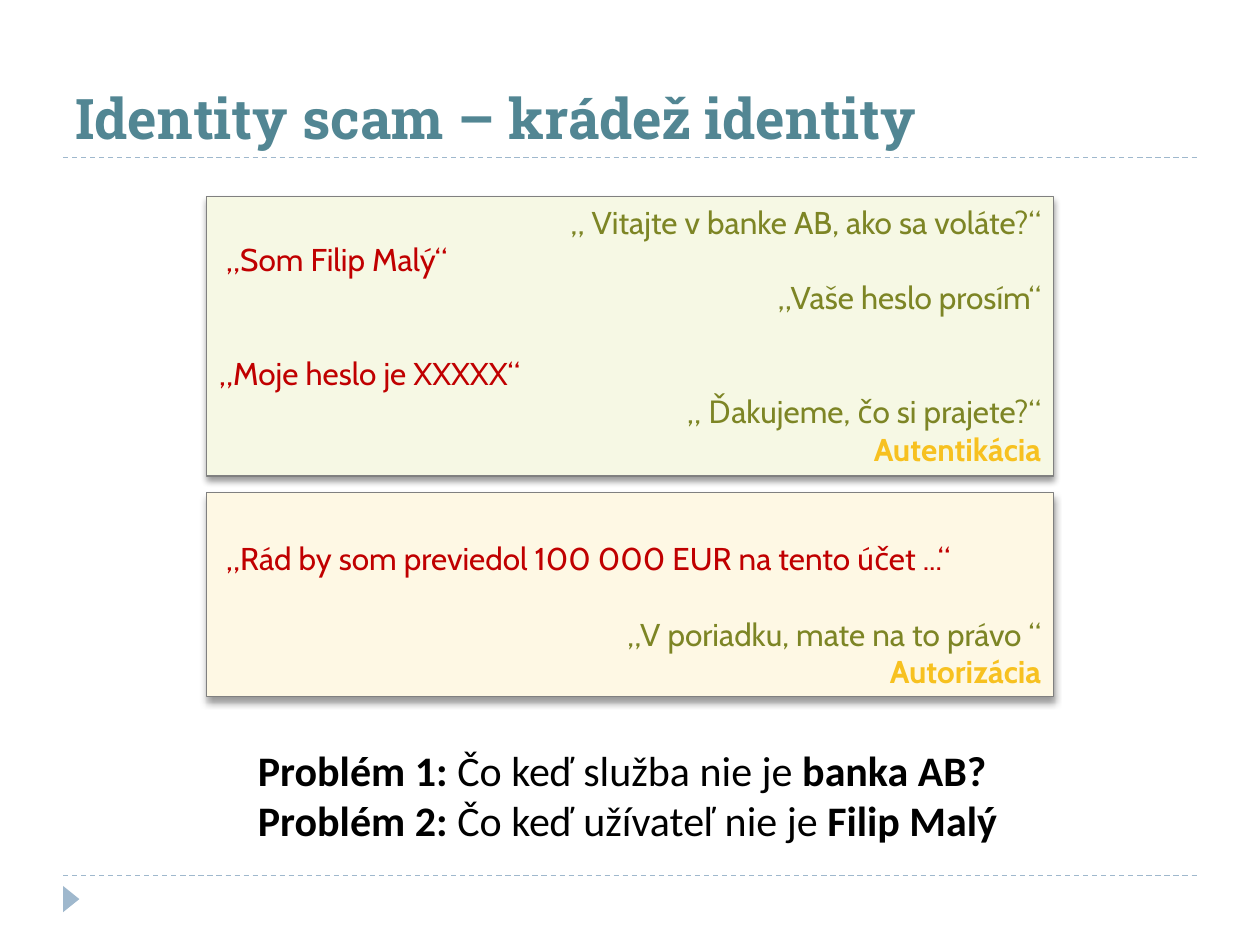
from lxml import etree
from pptx import Presentation
from pptx.dml.color import RGBColor
from pptx.enum.dml import MSO_LINE
from pptx.enum.shapes import MSO_CONNECTOR, MSO_SHAPE
from pptx.enum.text import MSO_ANCHOR, PP_ALIGN
from pptx.oxml.ns import qn
from pptx.util import Cm, Pt

LEFT, RIGHT = PP_ALIGN.LEFT, PP_ALIGN.RIGHT
TOP, BOTTOM = MSO_ANCHOR.TOP, MSO_ANCHOR.BOTTOM
RECTANGLE, TRIANGLE = MSO_SHAPE.RECTANGLE, MSO_SHAPE.ISOSCELES_TRIANGLE
STRAIGHT, DASH = MSO_CONNECTOR.STRAIGHT, MSO_LINE.DASH

COLORS = {
    "title": "528693",
    "accent": "9FB8CD",
    "bank": "7D8525",
    "caller": "C00000",
    "concept": "F7C120",
    "border": "808080",
    "green_panel": "F6F8E4",
    "yellow_panel": "FEF8E4",
    "black": "000000",
}
PANEL_LEFT, PANEL_WIDTH = 4.17, 17.07
LINE_GAP = 21.7  # points, one line of dialogue
CALLER_INDENT = 0.14


def color(name):
    return RGBColor.from_string(COLORS[name])


def add_span(para, text, font, size, color_name, bold=False):
    span = para.add_run()
    span.text = text
    span.font.name = font
    span.font.size = Pt(size)
    span.font.bold = bold
    span.font.color.rgb = color(color_name)


def next_para(frame, index):
    return frame.add_paragraph() if index else frame.paragraphs[0]


def add_rule(page, y):
    rule = page.shapes.add_connector(STRAIGHT, Cm(1.27), Cm(y), Cm(24.13), Cm(y))
    rule.line.color.rgb = color("accent")
    rule.line.width = Pt(0.75)
    rule.line.dash_style = DASH
    etree.SubElement(rule._element.spPr, qn("a:effectLst"))


def add_marker(page):
    marker = page.shapes.add_shape(TRIANGLE, Cm(1.17), Cm(17.96), Cm(0.53), Cm(0.33))
    marker.rotation = 90
    marker.shadow.inherit = False
    marker.fill.solid()
    marker.fill.fore_color.rgb = color("accent")
    marker.line.fill.background()


def add_text_box(page, left, top, width, height, wrap=True, anchor=TOP):
    box = page.shapes.add_textbox(Cm(left), Cm(top), Cm(width), Cm(height))
    box.text_frame.word_wrap = wrap
    box.text_frame.vertical_anchor = anchor
    return box.text_frame


def add_drop_shadow(shape):
    shape.shadow.inherit = False
    effects = shape._element.spPr.find(qn("a:effectLst"))
    shadow = etree.SubElement(
        effects, qn("a:outerShdw"), blurRad=str(Pt(4)), dist=str(Pt(3)),
        dir="5400000", rotWithShape="0")
    tint = etree.SubElement(shadow, qn("a:srgbClr"), val=COLORS["black"])
    etree.SubElement(tint, qn("a:alpha"), val="40000")


def add_dialogue(page, top, height, fill, anchor, lines):
    """Panel of (speaker, text, indent in cm, empty lines before)."""
    panel = page.shapes.add_shape(
        RECTANGLE, Cm(PANEL_LEFT), Cm(top), Cm(PANEL_WIDTH), Cm(height))
    panel.fill.solid()
    panel.fill.fore_color.rgb = color(fill)
    panel.line.color.rgb = color("border")
    panel.line.width = Pt(0.75)
    add_drop_shadow(panel)
    frame = panel.text_frame
    frame.word_wrap = True
    frame.vertical_anchor = anchor
    for index, (speaker, text, indent, gap) in enumerate(lines):
        para = next_para(frame, index)
        para.alignment = LEFT if speaker == "caller" else RIGHT
        if indent:
            para._p.get_or_add_pPr().set("marL", str(Cm(indent)))
        if gap:
            para.space_before = Pt(gap * LINE_GAP)
        add_span(para, text, "Cabin", 18, speaker, bold=speaker == "concept")


def add_problems(page, problems):
    frame = add_text_box(page, 4.95, 14.88, 15.85, 2.31, wrap=False)
    for index, (label, question, subject) in enumerate(problems):
        para = next_para(frame, index)
        for text, bold in ((label, True), (question, False), (subject, True)):
            add_span(para, text, "Calibri", 24, "black", bold)


def main():
    deck = Presentation()
    deck.slide_width, deck.slide_height = Cm(25.4), Cm(19.05)
    page = deck.slides.add_slide(deck.slide_layouts[6])

    for y in (17.65, 3.18):
        add_rule(page, y)
    add_marker(page)
    title = add_text_box(page, 1.27, 0.43, 22.86, 2.74, anchor=BOTTOM)
    add_span(title.paragraphs[0], "Identity scam – krádež identity",
             "Roboto Slab", 32, "title", bold=True)

    add_dialogue(page, 3.96, 5.64, "green_panel", TOP, [
        ("bank", "„ Vitajte v banke AB, ako sa voláte?“", 0, 0),
        ("caller", "„Som Filip Malý“", CALLER_INDENT, 0),
        ("bank", "„Vaše heslo prosím“", 0, 0),
        ("caller", "„Moje heslo je XXXXX“", 0, 1),
        ("bank", "„ Ďakujeme, čo si prajete?“", 0, 0),
        ("concept", "Autentikácia", 0, 0),
    ])
    add_dialogue(page, 9.93, 4.11, "yellow_panel", BOTTOM, [
        ("caller", "„Rád by som previedol 100 000 EUR na tento účet ...“",
         CALLER_INDENT, 0),
        ("bank", "„V poriadku, mate na to právo “", 0, 1),
        ("concept", "Autorizácia", 0, 0),
    ])
    add_problems(page, [
        ("Problém 1: ", "Čo keď služba nie je ", "banka AB?"),
        ("Problém 2: ", "Čo keď užívateľ nie je ", "Filip Malý"),
    ])
    deck.save("out.pptx")


if __name__ == "__main__":
    main()
